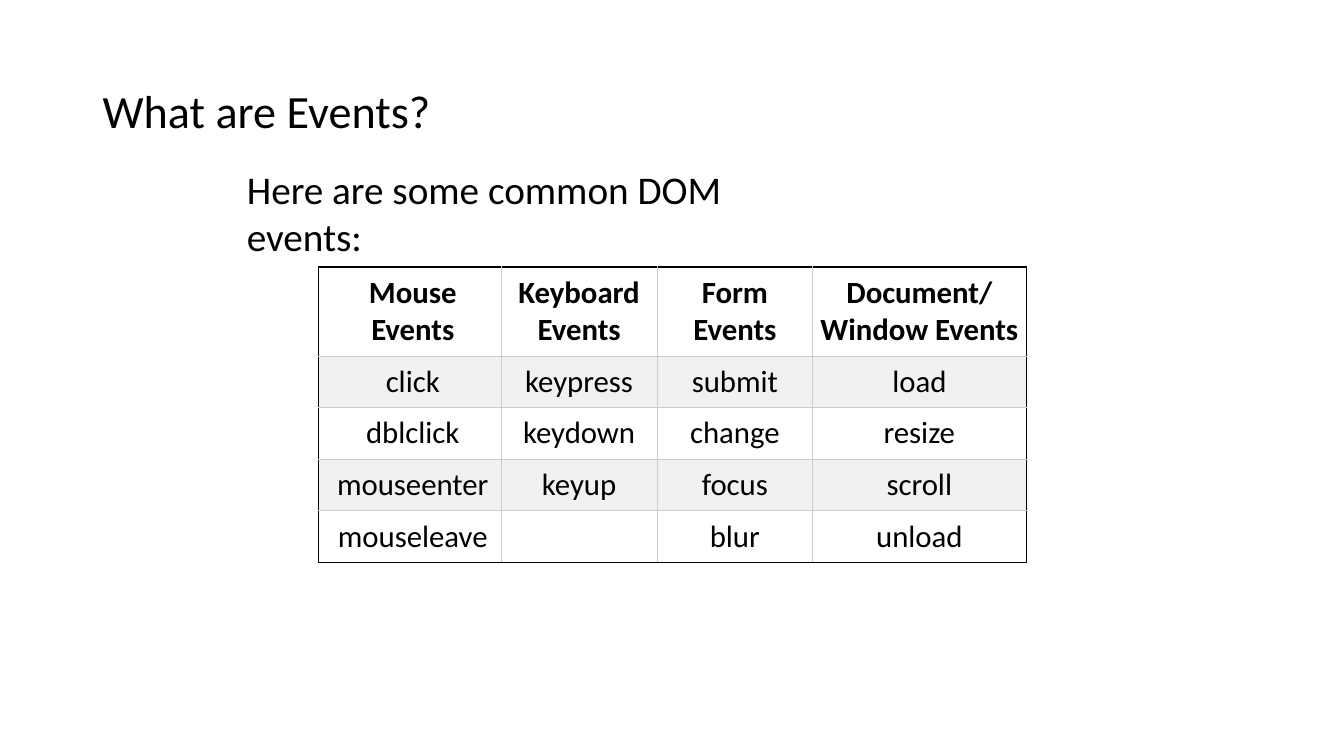
from dataclasses import dataclass

from lxml import etree
from pptx import Presentation
from pptx.dml.color import RGBColor
from pptx.enum.text import MSO_ANCHOR, MSO_AUTO_SIZE, PP_ALIGN
from pptx.oxml.ns import qn
from pptx.util import Inches, Pt

MIDDLE = MSO_ANCHOR.MIDDLE
CENTER = PP_ALIGN.CENTER
NO_FIT = MSO_AUTO_SIZE.NONE
GROW = MSO_AUTO_SIZE.SHAPE_TO_FIT_TEXT

SLIDE_WIDTH, SLIDE_HEIGHT = Inches(13.33), Inches(7.5)
FONT = "Calibri"
BLACK, WHITE, BAND, GRID_LINE = "000000", "FFFFFF", "F1F1F1", "CCCCCC"

# Event table: lengths are percentages of the slide's width or height
TABLE_LEFT, TABLE_TOP = 23.7, 35.33
COLUMN_WIDTHS = (13.58, 11.63, 11.55, 15.9)
HEADER_HEIGHT, ROW_HEIGHT = 11.73, 6.67
CELL_MARGIN, FIRST_COLUMN_MARGIN = Inches(0.07), Inches(0.13)
EVENTS = (
    ("Mouse Events", "Keyboard Events", "Form Events", "Document/ Window Events"),
    ("click", "keypress", "submit", "load"),
    ("dblclick", "keydown", "change", "resize"),
    ("mouseenter", "keyup", "focus", "scroll"),
    ("mouseleave", "", "blur", "unload"),
)


@dataclass(frozen=True)
class TextBlock:
    text: str
    left: float
    top: float
    width: float
    height: float
    size: float
    line_spacing: float
    auto_size: MSO_AUTO_SIZE


TEXT_BLOCKS = (
    TextBlock("What are Events?", 6.9, 5.33, 86.27, 19.33, 33, 0.9, NO_FIT),
    TextBlock("Here are some common DOM events:", 17.63, 24.27, 45.7, 7.6, 28, 1.0, GROW),
)


def across(percent: float) -> int:
    return round(SLIDE_WIDTH * percent / 100)


def down(percent: float) -> int:
    return round(SLIDE_HEIGHT * percent / 100)


def color(value: str) -> RGBColor:
    return RGBColor.from_string(value)


def style_font(paragraph, size: float, bold: bool = False) -> None:
    font = paragraph.font
    font.name, font.size, font.bold = FONT, Pt(size), bold
    font.color.rgb = color(BLACK)


def add_text(slide, block: TextBlock) -> None:
    shape = slide.shapes.add_textbox(
        across(block.left), down(block.top), across(block.width), down(block.height)
    )
    frame = shape.text_frame
    frame.word_wrap = True
    frame.auto_size = block.auto_size
    frame.vertical_anchor = MIDDLE
    paragraph = frame.paragraphs[0]
    paragraph.text = block.text
    paragraph.line_spacing = block.line_spacing
    style_font(paragraph, block.size)


def set_borders(cell, outer_sides: dict[str, bool]) -> None:
    properties = cell._tc.get_or_add_tcPr()
    for position, (side, outer) in enumerate(outer_sides.items()):
        line = etree.Element(qn(f"a:ln{side}"), w=str(Pt(1 if outer else 0.75)))
        fill = etree.SubElement(line, qn("a:solidFill"))
        etree.SubElement(fill, qn("a:srgbClr"), val=BLACK if outer else GRID_LINE)
        properties.insert(position, line)


def add_event_table(slide) -> None:
    row_heights = [HEADER_HEIGHT] + [ROW_HEIGHT] * (len(EVENTS) - 1)
    table = slide.shapes.add_table(
        len(EVENTS), len(COLUMN_WIDTHS), across(TABLE_LEFT), down(TABLE_TOP),
        across(sum(COLUMN_WIDTHS)), down(sum(row_heights)),
    ).table
    table.first_row = table.horz_banding = False
    for column, width in zip(table.columns, COLUMN_WIDTHS):
        column.width = across(width)
    for row, height in zip(table.rows, row_heights):
        row.height = down(height)

    last_row, last_column = len(EVENTS) - 1, len(COLUMN_WIDTHS) - 1
    for row_index, names in enumerate(EVENTS):
        for column_index, name in enumerate(names):
            cell = table.cell(row_index, column_index)
            cell.margin_left = CELL_MARGIN if column_index else FIRST_COLUMN_MARGIN
            cell.margin_right = cell.margin_top = cell.margin_bottom = CELL_MARGIN
            cell.fill.solid()
            cell.fill.fore_color.rgb = color(BAND if row_index % 2 else WHITE)
            set_borders(cell, {
                "L": column_index == 0,
                "R": column_index == last_column,
                "T": row_index == 0,
                "B": row_index == last_row,
            })
            paragraph = cell.text_frame.paragraphs[0]
            paragraph.text = name
            paragraph.alignment = CENTER
            style_font(paragraph, 22, bold=row_index == 0)


def main() -> None:
    presentation = Presentation()
    presentation.slide_width, presentation.slide_height = SLIDE_WIDTH, SLIDE_HEIGHT
    slide = presentation.slides.add_slide(presentation.slide_layouts[6])
    title, introduction = TEXT_BLOCKS
    add_text(slide, title)
    add_event_table(slide)
    add_text(slide, introduction)
    presentation.save("out.pptx")


if __name__ == "__main__":
    main()
